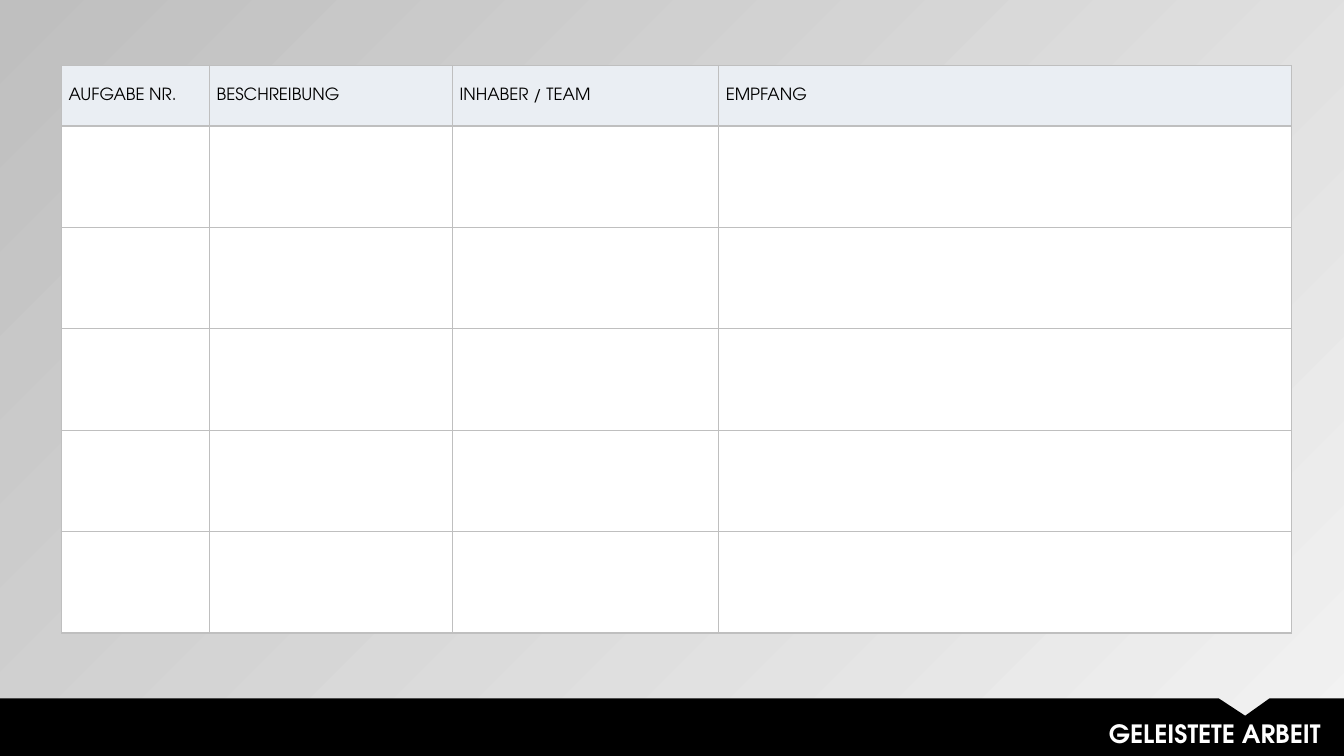
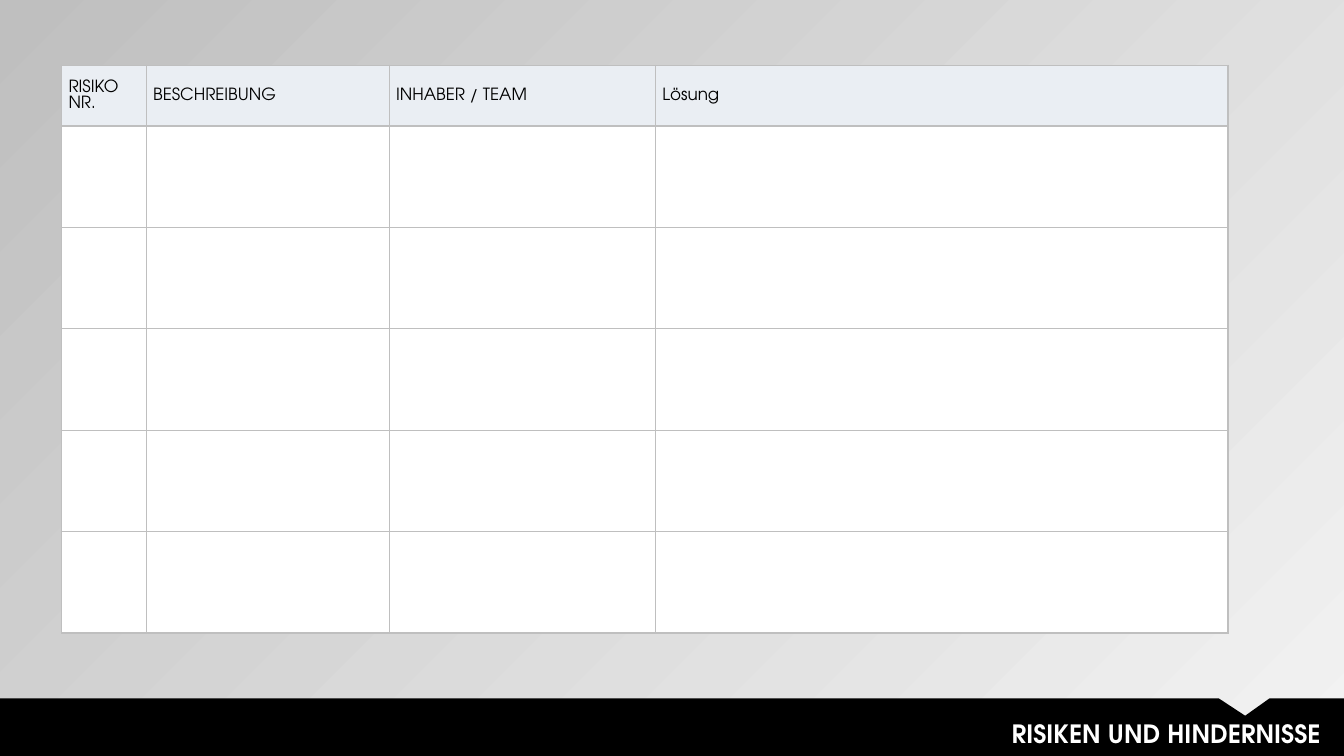
from pptx import Presentation, util as u
from pptx.dml.color import RGBColor
from pptx.enum import text as t
from pptx.oxml import parse_xml
from pptx.oxml.ns import nsdecls

BLACK = RGBColor(0, 0, 0)
WHITE = RGBColor(255, 255, 255)
PALE = RGBColor(0xF2, 0xF2, 0xF2)
GREY = RGBColor(0xBF, 0xBF, 0xBF)
HEAD = RGBColor(0xEA, 0xEE, 0xF3)
FONT = "TeX Gyre Adventor"

WIDE, HIGH = u.Inches(13.33), u.Inches(7.5)
LEFT, TOP = u.Inches(0.61), u.Inches(0.65)
HEAD_H, TABLE_H = u.Inches(0.6), u.Inches(5.63)
ROWS = 5
BAND_H = u.Inches(0.57)
COLS = (2.41, 2.64, 5.68)  # columns after the number column

# Title, width of the number column, column heads
PAGES = (
    ("GELEISTETE ARBEIT", 1.47,
     ("AUFGABE NR.", "BESCHREIBUNG", "INHABER / TEAM", "EMPFANG")),
    ("RISIKEN UND HINDERNISSE", 0.84,
     ("RISIKO NR.", "BESCHREIBUNG", "INHABER / TEAM", "Lösung")),
)


def style(par, size, color, bold=False):
    for run in par.runs:
        font = run.font
        font.name, font.size, font.bold = FONT, u.Pt(size), bold
        font.color.rgb = color


def backdrop(slide):
    fill = slide.background.fill
    fill.gradient()
    fill.gradient_angle = 135
    for stop, color in zip(fill.gradient_stops, (PALE, GREY)):
        stop.color.rgb = color


def border(cell):
    props = cell._tc.get_or_add_tcPr()
    for i, side in enumerate("LRTB"):
        props.insert(i, parse_xml(
            f'<a:ln{side} {nsdecls("a")} w="{u.Pt(1)}"><a:solidFill>'
            f'<a:srgbClr val="{GREY}"/></a:solidFill></a:ln{side}>'))


def grid(slide, x, y, high, widths, heads):
    widths = [u.Inches(w) for w in widths]
    frame = slide.shapes.add_table(
        ROWS + 1, len(heads), x, y, sum(widths), high)
    table = frame.table
    table.first_row = table.horz_banding = False
    for col, width in zip(table.columns, widths):
        col.width = width
    for i, row in enumerate(table.rows):
        row.height = (high - HEAD_H) // ROWS if i else HEAD_H
        for cell in row.cells:
            cell.fill.solid()
            cell.fill.fore_color.rgb = WHITE if i else HEAD
            border(cell)
    # Column heads
    for cell, label in zip(table.rows[0].cells, heads):
        cell.vertical_anchor = t.MSO_ANCHOR.MIDDLE
        cell.margin_left = cell.margin_right = u.Inches(0.07)
        cell.margin_top = cell.margin_bottom = 0
        par = cell.text_frame.paragraphs[0]
        par.text = label
        par.line_spacing = u.Pt(11.5)
        style(par, 12, BLACK)


def footer(slide, x, y, wide, high, title):
    # Band with a notch in its top edge
    notch = [(0.907, 0), (0.9265, 0.3), (0.9445, 0)]
    points = [(x + int(wide * a), y + int(high * b))
              for a, b in notch + [(1, 0), (1, 1), (0, 1)]]
    path = slide.shapes.build_freeform(x, y)
    path.add_line_segments(points, close=True)
    band = path.convert_to_shape()
    band.shadow.inherit = False
    band.fill.solid()
    band.fill.fore_color.rgb = BLACK
    band.line.fill.background()
    # Title
    box = slide.shapes.add_textbox(
        x + int(wide * 0.31), y + int(high * 0.26),
        int(wide * 0.68), int(high * 0.7))
    frame = box.text_frame
    frame.word_wrap = True
    frame.vertical_anchor = t.MSO_ANCHOR.MIDDLE
    par = frame.paragraphs[0]
    par.text = title
    par.alignment = t.PP_ALIGN.RIGHT
    style(par, 18, WHITE, True)


def main():
    deck = Presentation()
    deck.slide_width, deck.slide_height = WIDE, HIGH
    for title, first, heads in PAGES:
        slide = deck.slides.add_slide(deck.slide_layouts[6])
        backdrop(slide)
        grid(slide, LEFT, TOP, TABLE_H, (first,) + COLS, heads)
        footer(slide, 0, HIGH - BAND_H, WIDE, BAND_H, title)
    deck.save("out.pptx")


if __name__ == "__main__":
    main()
